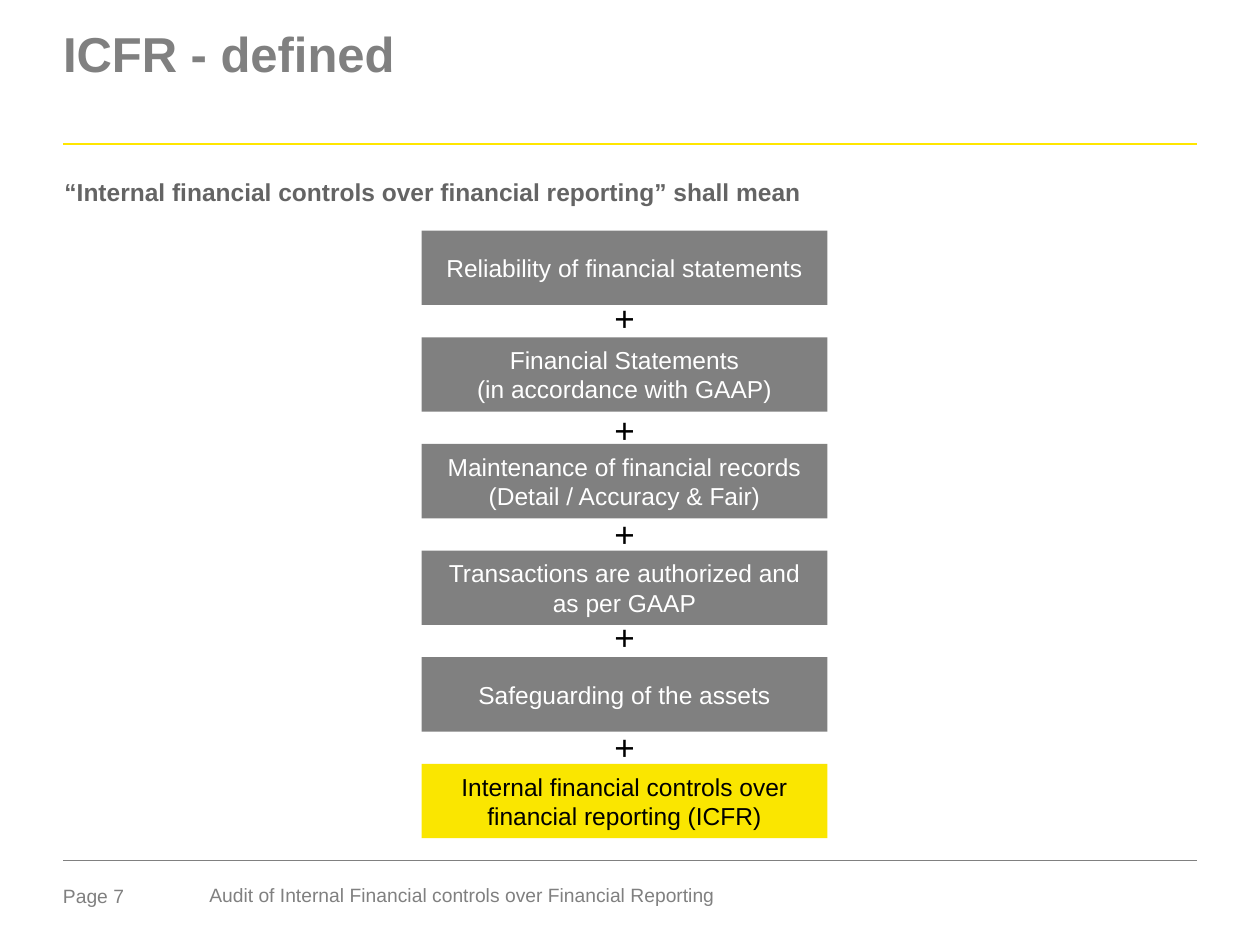
from pptx import Presentation
from pptx.dml.color import RGBColor
from pptx.enum.shapes import MSO_CONNECTOR, MSO_SHAPE
from pptx.enum.text import MSO_ANCHOR, MSO_AUTO_SIZE, PP_ALIGN
from pptx.oxml.ns import qn
from pptx.util import Cm, Pt
from lxml import etree

STRAIGHT = MSO_CONNECTOR.STRAIGHT
RECTANGLE = MSO_SHAPE.RECTANGLE
TOP, MIDDLE = MSO_ANCHOR.TOP, MSO_ANCHOR.MIDDLE
LEFT, CENTER = PP_ALIGN.LEFT, PP_ALIGN.CENTER
NO_AUTOFIT = MSO_AUTO_SIZE.NONE

GREY = RGBColor(0x80, 0x80, 0x80)
DARK_GREY = RGBColor(0x64, 0x64, 0x64)
RULE_YELLOW = RGBColor(0xFF, 0xE6, 0x00)
BOX_YELLOW = RGBColor(0xFA, 0xE6, 0x00)
WHITE = RGBColor(0xFF, 0xFF, 0xFF)
BLACK = RGBColor(0x00, 0x00, 0x00)

FONT = "Arial"
MARGIN, RIGHT_EDGE = 1.27, 24.13
BOX_LEFT, BOX_TOP, BOX_WIDTH, BOX_HEIGHT = 8.5, 4.65, 8.18, 1.5
BOX_PITCH = 2.15
PLUS_WIDTH, PLUS_HEIGHT = 1.85, 1.14
PLUS_TOPS = (5.84, 8.08, 10.19, 12.27, 14.48)
BOX_INSETS = (0.28, 0.15, 0.28, 0.15)

COMPONENTS = (
    ("Reliability of financial statements",),
    ("Financial Statements", "(in accordance with GAAP)"),
    ("Maintenance of financial records (Detail / Accuracy & Fair)",),
    ("Transactions are authorized and as per GAAP",),
    ("Safeguarding of the assets",),
)
RESULT = ("Internal financial controls over financial reporting (ICFR)",)


def write_text(shape, lines, size, color, bold=False, align=LEFT, anchor=TOP,
               insets=(0, 0, 0, 0), line_spacing=None, space_after=None):
    """Fill a shape with one paragraph per line; insets are in cm."""
    frame = shape.text_frame
    frame.word_wrap = True
    frame.auto_size = NO_AUTOFIT
    frame.vertical_anchor = anchor
    (frame.margin_left, frame.margin_top,
     frame.margin_right, frame.margin_bottom) = map(Cm, insets)
    for index, line in enumerate(lines):
        para = frame.add_paragraph() if index else frame.paragraphs[0]
        para.alignment = align
        para.line_spacing = line_spacing
        para.space_after = space_after
        span = para.add_run()
        span.text = line
        span.font.name = FONT
        span.font.size = Pt(size)
        span.font.bold = bold
        span.font.color.rgb = color


def add_label(page, left, top, width, height, text, size, color, **style):
    label = page.shapes.add_textbox(Cm(left), Cm(top), Cm(width), Cm(height))
    write_text(label, (text,), size, color, **style)


def add_rule(page, top, color, weight):
    rule = page.shapes.add_connector(
        STRAIGHT, Cm(MARGIN), Cm(top), Cm(RIGHT_EDGE), Cm(top))
    rule.line.color.rgb = color
    rule.line.width = Pt(weight)
    etree.SubElement(rule._element.spPr, qn("a:effectLst"))


def add_box(page, top, lines, fill, color):
    box = page.shapes.add_shape(
        RECTANGLE, Cm(BOX_LEFT), Cm(top), Cm(BOX_WIDTH), Cm(BOX_HEIGHT))
    box.shadow.inherit = False
    box.fill.solid()
    box.fill.fore_color.rgb = fill
    box.line.fill.background()
    write_text(box, lines, 14, color, align=CENTER, anchor=MIDDLE,
               insets=BOX_INSETS)


def set_title(page, text):
    title = page.shapes.title
    title.left, title.top = Cm(MARGIN), Cm(0.66)
    title.width, title.height = Cm(RIGHT_EDGE - MARGIN), Cm(2.39)
    write_text(title, (text,), 28, GREY, bold=True, line_spacing=0.85)


def add_stack(page):
    """Stack the components, joined by plus signs, above their result."""
    for index, lines in enumerate(COMPONENTS + (RESULT,)):
        is_result = lines is RESULT
        add_box(page, BOX_TOP + index * BOX_PITCH, lines,
                BOX_YELLOW if is_result else GREY,
                BLACK if is_result else WHITE)
    plus_left = BOX_LEFT + (BOX_WIDTH - PLUS_WIDTH) / 2
    for top in PLUS_TOPS:
        add_label(page, plus_left, top, PLUS_WIDTH, PLUS_HEIGHT, "+", 20, BLACK,
                  align=CENTER, anchor=MIDDLE, insets=BOX_INSETS)


def main():
    deck = Presentation()
    deck.slide_width, deck.slide_height = Cm(25.4), Cm(19.05)
    page = deck.slides.add_slide(deck.slide_layouts[5])
    body_style = {"insets": (0, 0.1, 0, 0), "line_spacing": 0.85,
                  "space_after": Pt(6)}

    set_title(page, "ICFR - defined")
    add_rule(page, 2.9, RULE_YELLOW, 1.5)
    add_label(page, 1.3, 3.56, 22.94, 0.61,
              "“Internal financial controls over financial reporting” shall mean",
              14, DARK_GREY, bold=True, **body_style)
    add_stack(page)
    add_rule(page, 17.35, GREY, 0.25)
    add_label(page, MARGIN, 17.83, 2, 0.56, "Page 7", 11, GREY)
    add_label(page, 4.22, 17.78, 10.97, 0.51,
              "Audit of Internal Financial controls over Financial Reporting",
              11, GREY, **body_style)
    deck.save("out.pptx")


if __name__ == "__main__":
    main()
